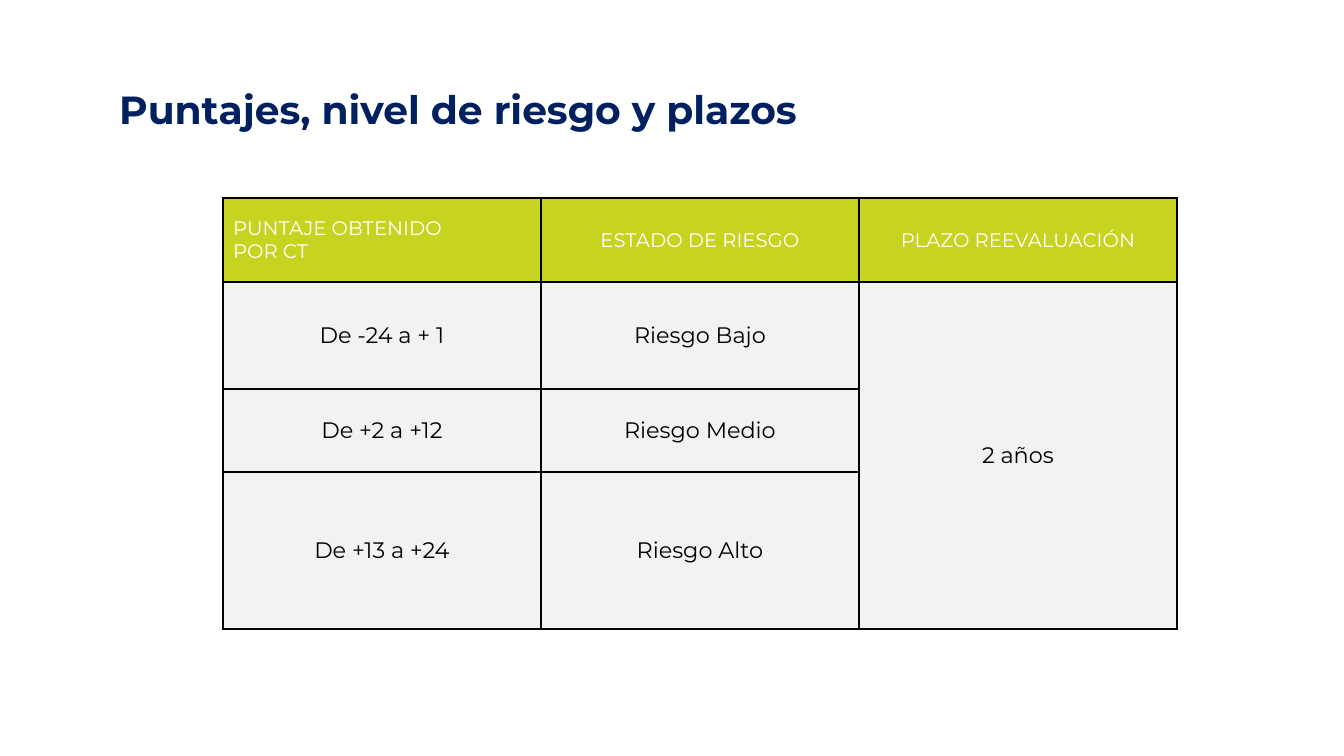
from dataclasses import dataclass

from lxml.etree import SubElement
from pptx import Presentation
from pptx.dml.color import RGBColor
from pptx.enum.text import MSO_ANCHOR as Anchor, MSO_AUTO_SIZE as Fit, PP_ALIGN as Align
from pptx.oxml.ns import qn
from pptx.slide import Slide
from pptx.table import _Cell as Cell
from pptx.text.text import _Paragraph as Para
from pptx.util import Emu, Pt

NAVY = RGBColor(0x00, 0x20, 0x60)
LIME = RGBColor(0xC6, 0xD3, 0x21)
GREY = RGBColor(0xF2, 0xF2, 0xF2)
WHITE = RGBColor(0xFF, 0xFF, 0xFF)
BLACK = RGBColor(0x00, 0x00, 0x00)
FONT = "Montserrat"
SCALE = 914400 / 100.8  # EMU in one px

COLS = [318] * 3
ROWS = [84, 107, 83, 157]


@dataclass
class Style:
    size: int
    color: RGBColor
    bold: bool = False


@dataclass
class Entry:
    row: int
    col: int
    lines: list[str]
    align: Align = Align.CENTER


TITLE = Style(28, NAVY, True)
HEAD = Style(14, WHITE)
BODY = Style(16, BLACK)

ENTRIES = [
    Entry(0, 0, ["PUNTAJE OBTENIDO", "POR CT"], Align.LEFT),
    Entry(0, 1, ["ESTADO DE RIESGO"]),
    Entry(0, 2, ["PLAZO REEVALUACIÓN"]),
    Entry(1, 0, ["De -24 a + 1"]),
    Entry(1, 1, ["Riesgo Bajo"]),
    Entry(1, 2, ["2 años"]),
    Entry(2, 0, ["De +2 a +12"]),
    Entry(2, 1, ["Riesgo Medio"]),
    Entry(3, 0, ["De +13 a +24"]),
    Entry(3, 1, ["Riesgo Alto"]),
]


def px(count: int) -> Emu:
    return Emu(round(count * SCALE))


def write(para: Para, text: str, style: Style, align: Align) -> None:
    para.alignment = align
    run = para.add_run()
    run.text = text
    font = run.font
    font.name, font.size, font.bold = FONT, Pt(style.size), style.bold
    font.color.rgb = style.color


def paint(cell: Cell, color: RGBColor) -> None:
    # Borders come before the fill in the cell properties
    props = cell._tc.get_or_add_tcPr()
    for side in ("lnL", "lnR", "lnT", "lnB"):
        line = SubElement(props, qn(f"a:{side}"), w=str(Pt(1)))
        fill = SubElement(line, qn("a:solidFill"))
        SubElement(fill, qn("a:srgbClr"), val=str(BLACK))
    cell.fill.solid()
    cell.fill.fore_color.rgb = color


def add_title(slide: Slide) -> None:
    title = slide.shapes.title
    title.left, title.top = px(109), px(80)
    title.width, title.height = px(1104), px(57)
    frame = title.text_frame
    frame.word_wrap = True
    frame.auto_size = Fit.SHAPE_TO_FIT_TEXT
    frame.vertical_anchor = Anchor.TOP
    write(frame.paragraphs[0], "Puntajes, nivel de riesgo y plazos", TITLE, Align.LEFT)


def add_grid(slide: Slide) -> None:
    shape = slide.shapes.add_table(
        len(ROWS), len(COLS), px(223), px(198), px(sum(COLS)), px(sum(ROWS)))
    table = shape.table
    for col, width in zip(table.columns, COLS):
        col.width = px(width)
    for row, height in zip(table.rows, ROWS):
        row.height = px(height)

    # Fills and borders
    for place, cell in enumerate(table.iter_cells()):
        paint(cell, LIME if place < len(COLS) else GREY)
    table.cell(1, 2).merge(table.cell(3, 2))

    # Text
    for entry in ENTRIES:
        cell = table.cell(entry.row, entry.col)
        cell.vertical_anchor = Anchor.MIDDLE
        frame = cell.text_frame
        for place, line in enumerate(entry.lines):
            para = frame.add_paragraph() if place else frame.paragraphs[0]
            write(para, line, BODY if entry.row else HEAD, entry.align)


def main() -> None:
    deck = Presentation()
    deck.slide_width, deck.slide_height = px(1344), px(756)
    slide = deck.slides.add_slide(deck.slide_layouts[5])
    add_grid(slide)
    add_title(slide)
    deck.save("out.pptx")


if __name__ == "__main__":
    main()
